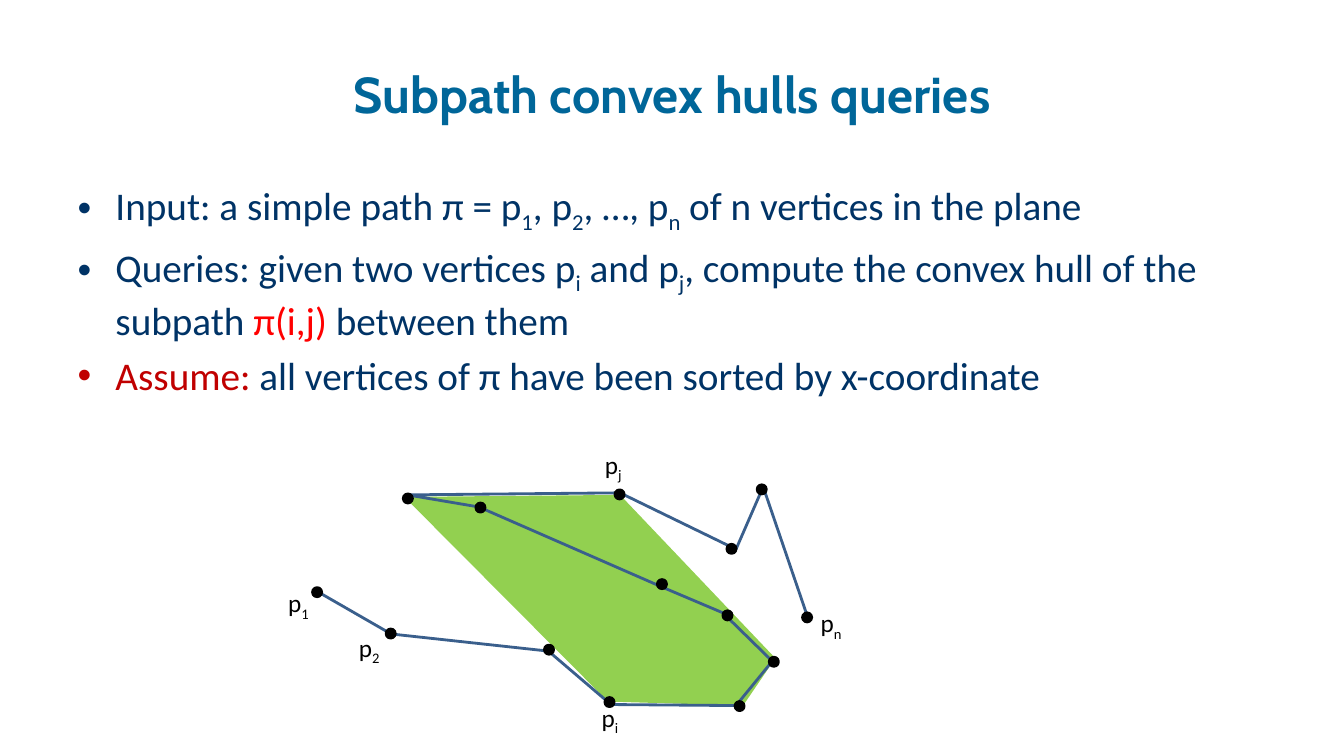
from pptx import Presentation
from pptx.dml.color import RGBColor
from pptx.enum.shapes import MSO_SHAPE as Preset
from pptx.enum.text import MSO_ANCHOR as Anchor, MSO_AUTO_SIZE as AutoSize, PP_ALIGN as Align
from pptx.util import Inches, Pt

COLORS = {
    "title": "006699", "body": "003366", "query": "FF0000", "assume": "C00000",
    "hull": "92D050", "path": "3A5F8C", "point": "000000",
}
DOT = 0.09

# A span is (text, colour name, is subscript)
BULLETS = [
    [("Input: a simple path π = p", "body", False), ("1", "body", True),
     (", p", "body", False), ("2", "body", True),
     (", …, p", "body", False), ("n", "body", True),
     (" of n vertices in the plane", "body", False)],
    [("Queries: given two vertices p", "body", False), ("i", "body", True),
     (" and p", "body", False), ("j", "body", True),
     (", compute the convex hull of the subpath ", "body", False),
     ("π(i,j)", "query", False), (" between them", "body", False)],
    [("Assume: ", "assume", False),
     ("all vertices of π have been sorted by x-coordinate", "body", False)],
]

HULL = [(6.03, 6.96), (7.37, 7), (7.69, 6.53), (6.15, 4.91), (4.01, 4.93)]
PATH = [(3.15, 5.87), (3.88, 6.29), (5.44, 6.46), (6.06, 6.99), (7.3, 7),
        (7.66, 6.56), (7.17, 6.08), (6.58, 5.83), (4.75, 5.03), (4.04, 4.91),
        (6.15, 4.89), (7.3, 5.45), (7.57, 4.83), (8.02, 6.15)]
# Left and top of each vertex dot, in path order
DOTS = [(3.1, 5.83), (3.83, 6.24), (5.4, 6.4), (6, 6.92), (7.29, 6.96),
        (7.63, 6.52), (7.17, 6.06), (6.52, 5.75), (4.72, 4.99), (4, 4.9),
        (6.1, 4.86), (7.21, 5.4), (7.51, 4.81), (7.96, 6.08)]
# Subscript, left, top, width
LABELS = [("1", 2.76, 5.78, 0.42), ("2", 3.46, 6.22, 0.42), ("n", 8.04, 5.98, 0.42),
          ("i", 5.87, 6.92, 0.37), ("j", 5.9, 4.41, 0.38)]


def color(name):
    return RGBColor.from_string(COLORS[name])


def add_span(para, text, size, color_name, font="Calibri", subscript=False):
    span = para.add_run()
    span.text = text
    span.font.name = font
    span.font.size = Pt(size)
    span.font.color.rgb = color(color_name)
    if subscript:
        span.font._element.set("baseline", "-25000")
    return span


def place(shape, left, top, width, height):
    shape.left, shape.top = Inches(left), Inches(top)
    shape.width, shape.height = Inches(width), Inches(height)


def fill_title(title):
    place(title, 0.67, 0.3, 12, 1.25)
    title.text_frame.vertical_anchor = Anchor.MIDDLE
    para = title.text_frame.paragraphs[0]
    para.alignment = Align.CENTER
    span = add_span(para, "Subpath convex hulls queries", 36, "title", "Cabin")
    span.font.bold = True
    span.font._element.set("spc", "10")


def fill_bullets(body):
    place(body, 0.67, 1.75, 12, 3.04)
    frame = body.text_frame
    frame.auto_size = AutoSize.NONE
    for index, spans in enumerate(BULLETS):
        para = frame.add_paragraph() if index else frame.paragraphs[0]
        for text, color_name, subscript in spans:
            add_span(para, text, 28, color_name, subscript=subscript)


def add_outline(page, points, close):
    corners = [(Inches(x), Inches(y)) for x, y in points]
    builder = page.shapes.build_freeform(*corners[0])
    builder.add_line_segments(corners[1:], close=close)
    shape = builder.convert_to_shape()
    shape.shadow.inherit = False
    return shape


def add_hull(page):
    hull = add_outline(page, HULL, close=True)
    hull.fill.solid()
    hull.fill.fore_color.rgb = color("hull")
    hull.line.fill.background()


def add_path(page):
    path = add_outline(page, PATH, close=False)
    path.fill.background()
    path.line.color.rgb = color("path")
    path.line.width = Pt(2)


def add_dot(page, left, top):
    dot = page.shapes.add_shape(Preset.OVAL, Inches(left), Inches(top), Inches(DOT), Inches(DOT))
    dot.shadow.inherit = False
    dot.fill.solid()
    dot.fill.fore_color.rgb = color("point")
    dot.line.color.rgb = color("point")
    dot.line.width = Pt(2)


def add_label(page, subscript, left, top, width):
    box = page.shapes.add_textbox(Inches(left), Inches(top), Inches(width), Inches(0.4))
    box.text_frame.word_wrap = False
    box.text_frame.auto_size = AutoSize.SHAPE_TO_FIT_TEXT
    para = box.text_frame.paragraphs[0]
    add_span(para, "p", 18, "point")
    add_span(para, subscript, 18, "point", subscript=True)


def main():
    deck = Presentation()
    deck.slide_width, deck.slide_height = Inches(13.33), Inches(7.5)
    page = deck.slides.add_slide(deck.slide_layouts[1])

    # Title and list
    fill_title(page.shapes.title)
    fill_bullets(page.placeholders[1])

    # Path with the hull of its subpath
    add_hull(page)
    add_path(page)
    for left, top in DOTS:
        add_dot(page, left, top)
    for label in LABELS:
        add_label(page, *label)

    deck.save("out.pptx")


if __name__ == "__main__":
    main()
